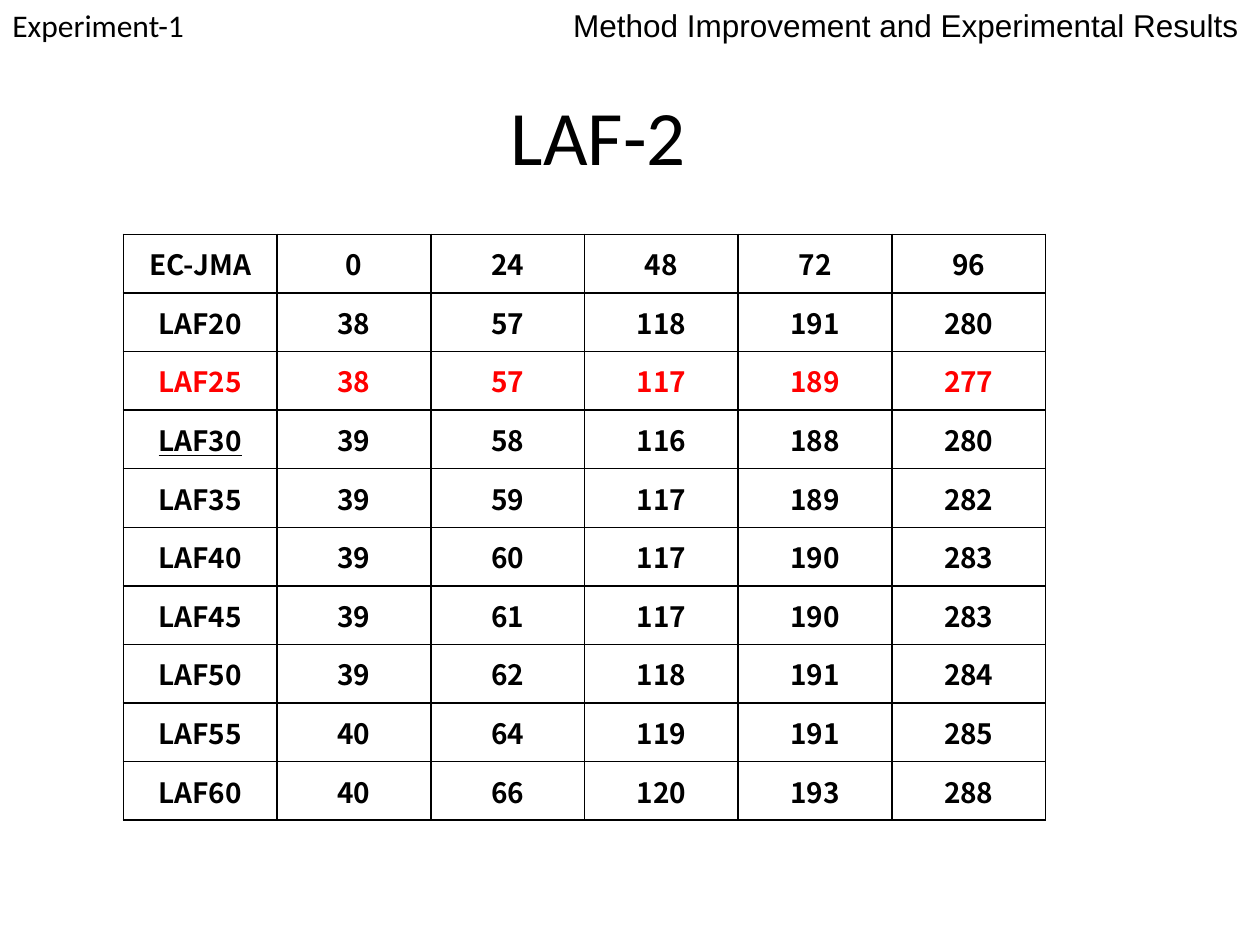
from dataclasses import dataclass

from lxml import etree
from pptx import Presentation
from pptx import util as u
from pptx.dml.color import RGBColor
from pptx.enum import text
from pptx.oxml.ns import qn


@dataclass(frozen=True)
class Theme:
    ink: str = "000000"
    highlight: str = "FF0000"
    body_font: str = "Calibri"
    topic_font: str = "Arial"
    table_font: str = "Noto Sans CJK SC"
    title_size: int = 44
    header_size: int = 18
    table_size: int = 16
    border_width: int = 1


THEME = Theme()

HOURS = [0, 24, 48, 72, 96]
ERRORS = {
    "LAF20": [38, 57, 118, 191, 280],
    "LAF25": [38, 57, 117, 189, 277],
    "LAF30": [39, 58, 116, 188, 280],
    "LAF35": [39, 59, 117, 189, 282],
    "LAF40": [39, 60, 117, 190, 283],
    "LAF45": [39, 61, 117, 190, 283],
    "LAF50": [39, 62, 118, 191, 284],
    "LAF55": [40, 64, 119, 191, 285],
    "LAF60": [40, 66, 120, 193, 288],
}
HIGHLIGHTED = "LAF25"
UNDERLINED = "LAF30"
COLUMN_WIDTH, ROW_HEIGHT = 1.22, 0.465


def add_run(paragraph, words, font, size, color=THEME.ink, bold=False, underline=False):
    run = paragraph.add_run()
    run.text = words
    run.font.name = font
    run.font.size = u.Pt(size)
    run.font.bold = bold
    run.font.underline = underline
    run.font.color.rgb = RGBColor.from_string(color)


def add_label(slide, words, box, font, size,
              align=text.PP_ALIGN.LEFT, anchor=text.MSO_ANCHOR.TOP):
    label = slide.shapes.add_textbox(*map(u.Inches, box))
    frame = label.text_frame
    frame.word_wrap = True
    frame.vertical_anchor = anchor
    frame.paragraphs[0].alignment = align
    add_run(frame.paragraphs[0], words, font, size)


def set_borders(cell):
    properties = cell._tc.get_or_add_tcPr()
    for side in ("lnL", "lnR", "lnT", "lnB"):
        line = etree.SubElement(properties, qn(f"a:{side}"),
                                w=str(u.Pt(THEME.border_width)))
        fill = etree.SubElement(line, qn("a:solidFill"))
        etree.SubElement(fill, qn("a:srgbClr"), val=THEME.ink)


def fill_cell(cell, words, color, underline):
    cell.margin_left = cell.margin_right = cell.margin_top = cell.margin_bottom = 0
    cell.vertical_anchor = text.MSO_ANCHOR.MIDDLE
    set_borders(cell)
    cell.fill.background()
    paragraph = cell.text_frame.paragraphs[0]
    paragraph.alignment = text.PP_ALIGN.CENTER
    add_run(paragraph, words, THEME.table_font, THEME.table_size, color,
            bold=True, underline=underline)


def add_error_table(slide, left, top):
    rows = [["EC-JMA", *HOURS]] + [[name, *errors] for name, errors in ERRORS.items()]
    columns = len(rows[0])
    table = slide.shapes.add_table(
        len(rows), columns, u.Inches(left), u.Inches(top),
        u.Inches(COLUMN_WIDTH * columns), u.Inches(ROW_HEIGHT * len(rows))).table
    table.first_row = table.horz_banding = False
    for r, row in enumerate(rows):
        color = THEME.highlight if row[0] == HIGHLIGHTED else THEME.ink
        for c, value in enumerate(row):
            fill_cell(table.cell(r, c), str(value), color, value == UNDERLINED)


def main():
    deck = Presentation()
    deck.slide_width, deck.slide_height = u.Inches(10), u.Inches(7.5)
    slide = deck.slides.add_slide(deck.slide_layouts[6])

    # Results table
    add_error_table(slide, 0.98, 1.86)

    # Running header: experiment on the left, topic on the right
    add_label(slide, "Experiment-1", (0, 0, 3.03, 0.4),
              THEME.body_font, THEME.header_size)
    add_label(slide, "Method Improvement and Experimental Results", (4.45, 0, 5.55, 0.4),
              THEME.topic_font, THEME.header_size)

    # Title
    add_label(slide, "LAF-2", (1.61, 0.44, 6.28, 1.25), THEME.body_font,
              THEME.title_size, text.PP_ALIGN.CENTER, text.MSO_ANCHOR.MIDDLE)

    deck.save("out.pptx")


if __name__ == "__main__":
    main()
